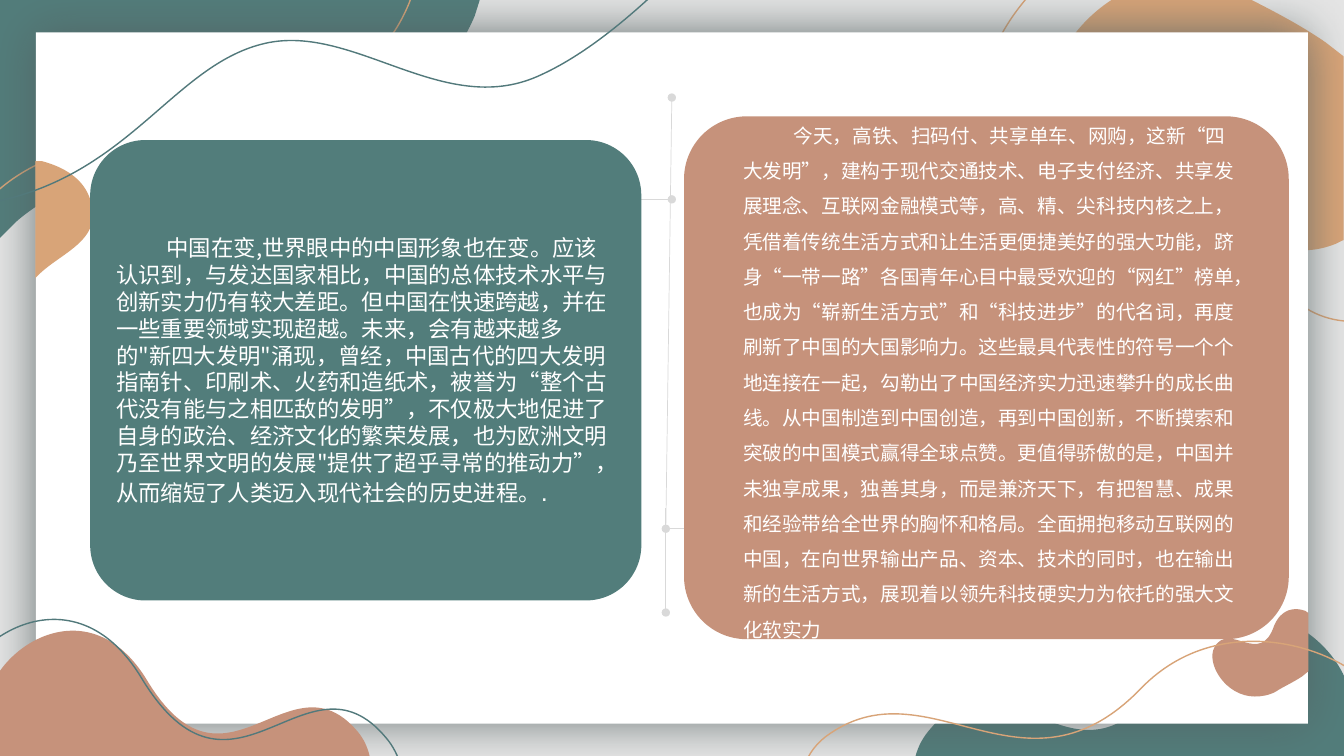
from lxml import etree
from pptx import Presentation
from pptx.dml.color import RGBColor
from pptx.enum.shapes import MSO_CONNECTOR, MSO_SHAPE
from pptx.enum.text import MSO_ANCHOR, PP_ALIGN
from pptx.oxml.ns import qn
from pptx.util import Pt

RECT = MSO_SHAPE.RECTANGLE
ROUND = MSO_SHAPE.ROUNDED_RECTANGLE
STRAIGHT = MSO_CONNECTOR.STRAIGHT
LEFT = PP_ALIGN.LEFT
MIDDLE = MSO_ANCHOR.MIDDLE

COLORS = {
    "veil": "808080", "paper": "FFFFFF", "shadow": "566363", "teal": "527D7B",
    "teal_line": "52797B", "sand": "D8A478", "clay": "C6927B", "grey": "D9D9D9",
}
CJK = "Noto Sans CJK SC"
EXTENT_STEPS = 16

# Outlines in points: a pair is a straight step, six numbers are a Bezier curve
TEAL_BOTTOM = [
    (960.5, 540.7), (964.8, 527.8, 967, 514, 964.8, 498.2),
    (958.3, 452.9, 881.3, 400.3, 834.5, 478.8),
    (771.1, 583.2, 720, 454.3, 664.6, 520.6),
    (659.5, 526.3, 655.9, 532.8, 653.8, 540.7)]
TEAL_TOP = [
    (0, 0), (342.7, 0), (339.1, 11.5), (316.8, 64.1, 262.8, 105.1, 162, 111.6),
    (85.7, 116.6, 38.9, 133.9, 10.8, 159.1), (0, 169.9)]
SAND_TOP = [
    (841.7, -15.1), (777.6, -13.7, 733, 58.3, 753.8, 93.6),
    (787, 152.6, 852.5, 49, 885.6, 141.1),
    (899.3, 179.3, 928.8, 184.3, 954, 174.2),
    (959.8, 171.4), (959.8, 40.3), (946.8, 30.2),
    (925.9, 15.8, 903.6, 5, 888.5, -2.9),
    (872.6, -11.5, 856.8, -15.1, 841.7, -15.1)]
SAND_TOP_RING = [
    (835.9, -51.8), (742.3, -50.4, 678.2, 54.7, 707.8, 106.6),
    (756.7, 192.2, 851, 41, 899.3, 174.2),
    (919.4, 230.4, 961.9, 237.6, 998.6, 223.2),
    (1007.3, 218.9), (1007.3, 28.1), (988.6, 13.7),
    (958.3, -7.2, 925.2, -23, 904.3, -34.6),
    (879.8, -46.8, 856.8, -52.6, 835.9, -51.8)]
SAND_LEFT_RING = [
    (-10.8, -7.9), (295.9, -7.9), (292.3, 2.2),
    (272.9, 49.7, 223.9, 87.1, 133.9, 92.9),
    (65.5, 97.9, 23.8, 113.8, -1.4, 136.1), (-10.8, 146.2)]
CLAY_BOTTOM = [
    (-5.8, 540.7), (-10.8, 529.2, -12.2, 517, -10.1, 503.3),
    (-5, 463, 63.4, 416.9, 105.1, 486),
    (161.3, 578.9, 206.6, 464.4, 255.6, 522.7),
    (259.9, 527.8, 262.8, 534.2, 264.2, 540.7)]
SAND_LEFT = [
    (66.2, 156.2), (64.1, 175.7, 38.9, 183.6, 25.2, 198.7),
    (25.2, 199.4), (25.2, 115.2), (30.2, 115.2),
    (46.1, 119.5, 58.3, 127.4, 63.4, 139.7),
    (66.2, 146.2, 67, 151.2, 66.2, 156.2)]
TEAL_RING = [
    (-29.5, 547.9), (-34.6, 535, -36.7, 519.8, -34.6, 504),
    (-28.1, 457.2, 51.8, 403.2, 100.8, 483.8),
    (166.3, 592.6, 218.9, 458.6, 275.8, 527),
    (280.8, 532.8, 284.4, 540, 286.6, 547.9)]
TEAL_WAVE = [
    (-344.9, 167), (-213.8, 165.6, -82.1, 164.2, 6.5, 141.8),
    (95.8, 118.8, 126.7, 45.4, 189.4, 31),
    (252.7, 16.6, 316.1, 84.2, 383.8, 54.7),
    (451.4, 25.2, 524.2, -61.2, 596.2, -147.6)]
CLAY_RIGHT = [
    (896.4, 497.5), (875.5, 497.5, 861.1, 473.8, 867.6, 462.2),
    (878.4, 443.5, 900, 476.6, 910.1, 447.1),
    (915.1, 434.9, 924.5, 433.4, 932.4, 436.3),
    (934.6, 437.8), (934.6, 479.5), (930.2, 483.1),
    (923.8, 487.4, 915.8, 491, 911.5, 493.9),
    (906.5, 496.8, 900.7, 497.5, 896.4, 497.5)]
SAND_BOTTOM_RING = [
    (982.8, 543.6), (989.3, 532.8, 992.2, 521.3, 989.3, 507.6),
    (980.6, 470.2, 878.4, 426.2, 815, 491.8),
    (730.8, 578.9, 663.1, 471.6, 589.7, 526.3),
    (583.2, 531.4, 578.9, 537.1, 576, 543.6)]

PAST_TEXT = (
    "中国在变,世界眼中的中国形象也在变。应该认识到，与发达国家相比，中国的总体技术水平与"
    "创新实力仍有较大差距。但中国在快速跨越，并在一些重要领域实现超越。未来，会有越来越多"
    "的\"新四大发明\"涌现，曾经，中国古代的四大发明指南针、印刷术、火药和造纸术，被誉为“整个"
    "古代没有能与之相匹敌的发明”，不仅极大地促进了自身的政治、经济文化的繁荣发展，也为欧洲文"
    "明乃至世界文明的发展\"提供了超乎寻常的推动力”，从而缩短了人类迈入现代社会的历史进程。")
TODAY_TEXT = (
    "今天，高铁、扫码付、共享单车、网购，这新“四大发明”，建构于现代交通技术、电子支付经济、"
    "共享发展理念、互联网金融模式等，高、精、尖科技内核之上，凭借着传统生活方式和让生活更便捷"
    "美好的强大功能，跻身“一带一路”各国青年心目中最受欢迎的“网红”榜单，也成为“崭新生活方式”"
    "和“科技进步”的代名词，再度刷新了中国的大国影响力。这些最具代表性的符号一个个地连接在一起，"
    "勾勒出了中国经济实力迅速攀升的成长曲线。从中国制造到中国创造，再到中国创新，不断摸索和突破"
    "的中国模式赢得全球点赞。更值得骄傲的是，中国并未独享成果，独善其身，而是兼济天下，有把智慧、"
    "成果和经验带给全世界的胸怀和格局。全面拥抱移动互联网的中国，在向世界输出产品、资本、技术的"
    "同时，也在输出新的生活方式，展现着以领先科技硬实力为依托的强大文化软实力")


def rgb(name):
    return RGBColor.from_string(COLORS[name])


def add_alpha(color, percent):
    etree.SubElement(color, qn("a:alpha"), val=str(percent * 1000))


def paint(sp, fill=None, line=None):
    sp.shadow.inherit = False
    if fill:
        sp.fill.solid()
        sp.fill.fore_color.rgb = rgb(fill)
    else:
        sp.fill.background()
    if line:
        sp.line.color.rgb = rgb(line)
        sp.line.width = Pt(1)
    else:
        sp.line.fill.background()


def add_box(s, kind, x, y, w, h, fill):
    sp = s.shapes.add_shape(kind, Pt(x), Pt(y), Pt(w), Pt(h))
    paint(sp, fill)
    if kind == ROUND:
        sp.adjustments[0] = 0.12
    return sp


def add_glow(sp, color, alpha, blur):
    effects = sp._element.spPr.find(qn("a:effectLst"))
    shadow = etree.SubElement(effects, qn("a:outerShdw"), blurRad=str(Pt(blur)),
                              dist="0", dir="0", algn="ctr", rotWithShape="0")
    add_alpha(etree.SubElement(shadow, qn("a:srgbClr"), val=COLORS[color]), alpha)


def trace(outline):
    """Points along the outline, which give its true extent."""
    points = [outline[0]]
    for step in outline[1:]:
        if len(step) == 2:
            points.append(step)
            continue
        ends = [points[-1], step[:2], step[2:4], step[4:]]
        for i in range(1, EXTENT_STEPS + 1):
            t = i / EXTENT_STEPS
            weights = ((1 - t) ** 3, 3 * t * (1 - t) ** 2, 3 * t * t * (1 - t), t ** 3)
            points.append(tuple(sum(k * e[axis] for k, e in zip(weights, ends))
                                for axis in (0, 1)))
    return [(Pt(x), Pt(y)) for x, y in points]


def add_blob(s, outline, fill=None, line=None, close=True):
    points = trace(outline)
    builder = s.shapes.build_freeform(*points[0], scale=1.0)
    builder.add_line_segments(points[1:], close=close)
    sp = builder.convert_to_shape()
    paint(sp, fill, line)
    # Real curves in place of the traced segments
    track = next(sp._element.iter(qn("a:path")))
    for node in list(track):
        track.remove(node)
    for i, step in enumerate(outline):
        tag = "moveTo" if i == 0 else "lnTo" if len(step) == 2 else "cubicBezTo"
        node = etree.SubElement(track, qn("a:" + tag))
        for x, y in zip(step[::2], step[1::2]):
            etree.SubElement(node, qn("a:pt"), x=str(Pt(x) - sp.left), y=str(Pt(y) - sp.top))
    if close:
        etree.SubElement(track, qn("a:close"))


def add_line(s, x1, y1, x2, y2, ovals=()):
    c = s.shapes.add_connector(STRAIGHT, Pt(x1), Pt(y1), Pt(x2), Pt(y2))
    c.line.color.rgb = rgb("grey")
    c.line.width = Pt(0.5)
    for end in ovals:
        etree.SubElement(c.line._get_or_add_ln(), qn("a:" + end), type="oval")
    etree.SubElement(c._element.spPr, qn("a:effectLst"))


def write_paragraph(sp, text, size, font):
    tf = sp.text_frame
    tf.word_wrap = True
    p = tf.paragraphs[0]
    p.alignment = LEFT
    p._p.get_or_add_pPr().set("indent", str(Pt(36)))
    p.font.color.rgb = rgb("paper")
    r = p.add_run()
    r.text = text
    r.font.size = Pt(size)
    r.font.name = font
    return p


def main():
    prs = Presentation()
    prs.slide_width, prs.slide_height = Pt(960), Pt(540)
    s = prs.slides.add_slide(prs.slide_layouts[6])

    # Backdrop behind the paper
    veil = add_box(s, RECT, 0, -0.7, 960, 541.4, "veil")
    add_alpha(veil.fill._xPr.find(qn("a:solidFill"))[0], 20)
    add_blob(s, TEAL_BOTTOM, fill="teal")
    add_blob(s, TEAL_TOP, fill="teal")
    add_blob(s, SAND_TOP, fill="sand")
    add_blob(s, SAND_TOP_RING, line="sand")
    add_blob(s, SAND_LEFT_RING, line="sand")

    # Paper and the shapes on it
    paper = add_box(s, RECT, 25.7, 23.1, 908.6, 493.9, "paper")
    add_glow(paper, "shadow", 85, 35)
    add_blob(s, CLAY_BOTTOM, fill="clay")
    add_blob(s, SAND_LEFT, fill="sand")
    add_blob(s, TEAL_RING, line="teal_line")
    add_blob(s, TEAL_WAVE, line="teal_line", close=False)
    add_blob(s, CLAY_RIGHT, fill="clay")
    add_blob(s, SAND_BOTTOM_RING, line="sand")

    # Branches to the cards
    add_line(s, 476.3, 377.3, 496, 377.3)
    add_line(s, 434.9, 142.4, 479.9, 142.4, ["tailEnd"])

    # Today card
    add_box(s, ROUND, 488.6, 83.1, 432, 373.5, "clay")
    tb = s.shapes.add_textbox(Pt(523.7), Pt(76.4), Pt(370), Pt(380.2))
    write_paragraph(tb, TODAY_TEXT, 14, "Arial").line_spacing = 1.5

    # Past card
    past = add_box(s, ROUND, 64.4, 100, 393.7, 328.9, "teal")
    past.text_frame.vertical_anchor = MIDDLE
    r = write_paragraph(past, PAST_TEXT, 16, CJK).add_run()
    r.text = "."
    r.font.size = Pt(18)
    r.font.name = "Arial"

    # Central stem
    add_line(s, 475.6, 362.9, 475.6, 437.5, ["tailEnd"])
    add_line(s, 479.9, 69.7, 475.6, 377.7, ["headEnd", "tailEnd"])

    prs.save("out.pptx")


if __name__ == "__main__":
    main()
